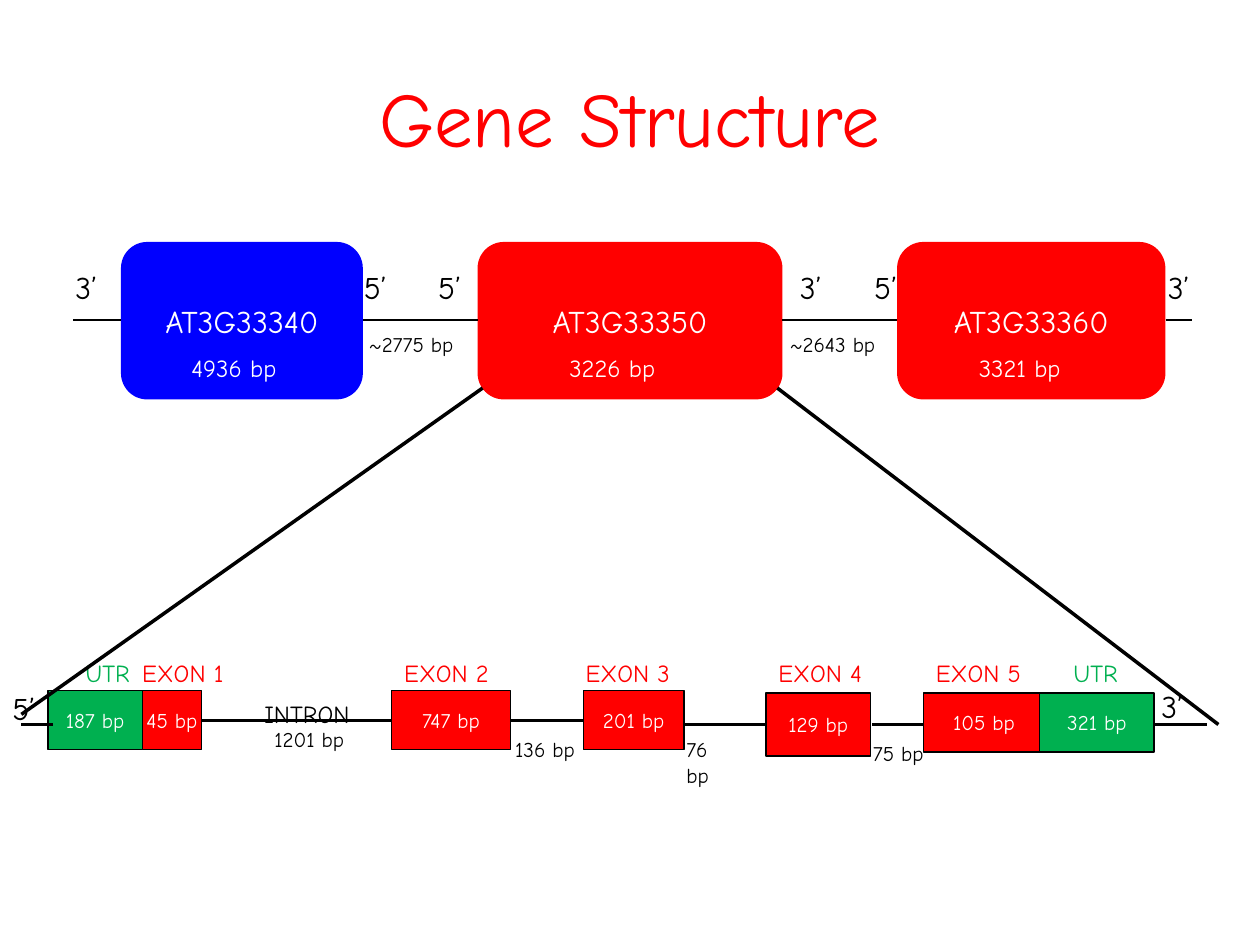
"""Draw a gene structure slide: three neighbouring genes and the exons of one."""
import pptx
import pptx.dml.color
import pptx.enum.shapes
import pptx.enum.text
import pptx.oxml
import pptx.util

Inches = pptx.util.Inches
Shapes = pptx.enum.shapes.MSO_SHAPE
Align = pptx.enum.text.PP_ALIGN
Anchor = pptx.enum.text.MSO_ANCHOR

RED, GREEN, BLUE = "FF0000", "00B050", "0000FF"
BLACK, WHITE = "000000", "FFFFFF"


def color(value):
    return pptx.dml.color.RGBColor.from_string(value)


def write(box, text, size=12, ink=BLACK, font="Comic Neue", align=Align.LEFT,
          anchor=Anchor.TOP, wrap=False):
    frame = box.text_frame
    frame.word_wrap = wrap
    frame.vertical_anchor = anchor
    para = frame.paragraphs[0]
    para.alignment = align
    span = para.add_run()
    span.text = text
    span.font.name = font
    span.font.size = pptx.util.Pt(size)
    span.font.color.rgb = color(ink)


class GenePage:
    def __init__(self, page):
        self.page = page

    def block(self, preset, left, top, width, height, fill, text, size, line=None):
        box = self.page.shapes.add_shape(
            preset, Inches(left), Inches(top), Inches(width), Inches(height))
        box.shadow.inherit = False
        box.fill.solid()
        box.fill.fore_color.rgb = color(fill)
        if line:
            box.line.color.rgb = color(line)
            box.line.width = pptx.util.Pt(0.75)
        else:
            box.line.fill.background()
        write(box, text, size=size, ink=WHITE, align=Align.CENTER, anchor=Anchor.MIDDLE)

    def label(self, text, left, top, width, height=0.34, **style):
        box = self.page.shapes.add_textbox(
            Inches(left), Inches(top), Inches(width), Inches(height))
        write(box, text, **style)
        if style.get("anchor") is None:
            box.text_frame.auto_size = pptx.enum.text.MSO_AUTO_SIZE.SHAPE_TO_FIT_TEXT

    def line(self, start_x, start_y, end_x, end_y, weight):
        line = self.page.shapes.add_connector(
            pptx.enum.shapes.MSO_CONNECTOR.STRAIGHT,
            Inches(start_x), Inches(start_y), Inches(end_x), Inches(end_y))
        line.line.color.rgb = color(BLACK)
        line.line.width = pptx.util.Pt(weight)
        properties = line._element.spPr
        properties.append(properties.makeelement(pptx.oxml.ns.qn("a:effectLst"), {}))


def draw_genes(gene_page):
    genes = [
        ("AT3G33340", "4936 bp", 0.96, 1.92, BLUE, 1.42),
        ("AT3G33350", "3226 bp", 3.79, 2.42, RED, 4.42),
        ("AT3G33360", "3321 bp", 7.12, 2.13, RED, 7.67),
    ]
    for name, length, left, width, fill, length_left in genes:
        gene_page.block(Shapes.ROUNDED_RECTANGLE, left, 1.92, width, 1.25, fill, name, 18)
        gene_page.label(length, length_left, 2.75, 0.91, size=14, ink=WHITE)
    for start, end in [(0.58, 0.96), (2.88, 3.79), (6.21, 7.12), (9.25, 9.46)]:
        gene_page.line(start, 2.54, end, 2.54, 0.75)
    for text, left in [("3’", 0.5), ("5’", 2.79), ("5’", 3.38),
                       ("3’", 6.25), ("5’", 6.84), ("3’", 9.17)]:
        gene_page.label(text, left, 2.08, 0.46, 0.4, size=18)
    for text, left in [("~2775 bp", 2.83), ("~2643 bp", 6.17)]:
        gene_page.label(text, left, 2.58, 0.9, 0.3)


def draw_exons(gene_page):
    segments = [
        ("UTR", 0.58, "187 bp", 0.38, 5.48, 0.75, 0.47, GREEN),
        ("EXON 1", 1.03, "45 bp", 1.13, 5.48, 0.47, 0.47, RED),
        ("EXON 2", 3.11, "747 bp", 3.11, 5.48, 0.94, 0.47, RED),
        ("EXON 3", 4.55, "201 bp", 4.63, 5.48, 0.8, 0.47, RED),
        ("EXON 4", 6.08, "129 bp", 6.08, 5.5, 0.83, 0.5, RED),
        ("EXON 5", 7.33, "105 bp", 7.33, 5.5, 0.96, 0.47, RED),
        ("UTR", 8.42, "321 bp", 8.25, 5.5, 0.91, 0.47, GREEN),
    ]
    for name, name_left, length, left, top, width, height, fill in segments:
        gene_page.block(Shapes.RECTANGLE, left, top, width, height, fill, length, 12, BLACK)
        name_width = 0.58 if name == "UTR" else 0.88
        gene_page.label(name, name_left, 5.17, name_width, size=14, ink=fill)

    gene_page.label("5’", 0, 5.42, 0.46, 0.38, size=18)
    gene_page.label("3’", 9.12, 5.4, 0.46, 0.38, size=18)
    gene_page.label("INTRON", 2, 5.5, 1.17, size=14, wrap=True)
    for text, left, top, width in [("1201 bp", 2.08, 5.72, 0.77), ("136 bp", 3.99, 5.8, 0.68),
                                   ("75 bp", 6.83, 5.83, 0.62)]:
        gene_page.label(text, left, top, width, 0.3)
    gene_page.label("76 bp", 5.35, 5.8, 0.5, 0.5, wrap=True)

    for start, end, height in [(0.17, 0.42, 5.75), (1.6, 3.11, 5.72), (4.05, 4.63, 5.72),
                               (5.42, 6.08, 5.75), (6.92, 7.33, 5.75), (9.17, 9.58, 5.75)]:
        gene_page.line(start, height, end, height, 2)
    gene_page.line(3.83, 3.08, 0.17, 5.67, 2)
    gene_page.line(6.17, 3.08, 9.67, 5.75, 2)


def main():
    deck = pptx.Presentation()
    deck.slide_width, deck.slide_height = Inches(10), Inches(7.5)
    gene_page = GenePage(deck.slides.add_slide(deck.slide_layouts[6]))
    gene_page.label("Gene Structure", 0.5, 0.3, 9, 1.25, size=44, ink=RED,
                    align=Align.CENTER, anchor=Anchor.MIDDLE, wrap=True)
    draw_genes(gene_page)
    draw_exons(gene_page)
    deck.save("out.pptx")


if __name__ == "__main__":
    main()
